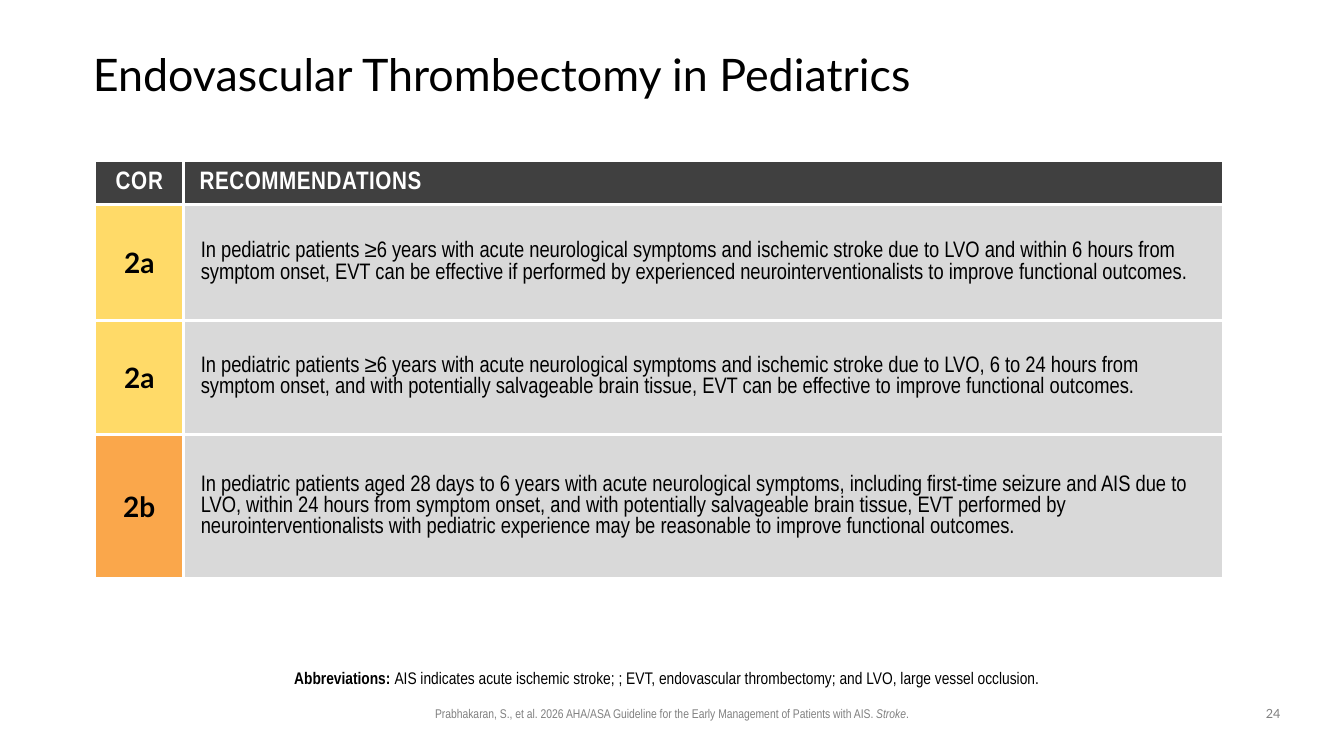
from lxml import etree
from pptx import Presentation
from pptx.dml.color import RGBColor
from pptx.enum.text import MSO_ANCHOR, MSO_AUTO_SIZE, PP_ALIGN
from pptx.oxml.ns import qn
from pptx.util import Cm, Pt

LEFT, CENTER = PP_ALIGN.LEFT, PP_ALIGN.CENTER
TOP, MIDDLE, BOTTOM = MSO_ANCHOR.TOP, MSO_ANCHOR.MIDDLE, MSO_ANCHOR.BOTTOM
NO_AUTOFIT = MSO_AUTO_SIZE.NONE
NARROW, LATO = "Arial Narrow", "Lato"
BLACK, WHITE, GRAY = "000000", "FFFFFF", "808080"
HEADER_FILL, BODY_FILL = "404040", "D9D9D9"
COR_FILLS = {"2a": "FFDA68", "2b": "FAA74B"}
RECOMMENDATIONS = [
    ("2a", 2.92, "In pediatric patients ≥6 years with acute neurological symptoms and ischemic stroke due to LVO and within 6 hours from symptom onset, EVT can be effective if performed by experienced neurointerventionalists to improve functional outcomes."),
    ("2a", 2.87, "In pediatric patients ≥6 years with acute neurological symptoms and ischemic stroke due to LVO, 6 to 24 hours from symptom onset, and with potentially salvageable brain tissue, EVT can be effective to improve functional outcomes."),
    ("2b", 3.63, "In pediatric patients aged 28 days to 6 years with acute neurological symptoms, including first-time seizure and AIS due to LVO, within 24 hours from symptom onset, and with potentially salvageable brain tissue, EVT performed by neurointerventionalists with pediatric experience may be reasonable to improve functional outcomes."),
]


def color(value):
    return RGBColor.from_string(value)


def add_text(p, text, size=16, font=NARROW, fill=BLACK, bold=False,
             italic=False, align=LEFT, spacing=None, tracking=0, indent=0):
    p.alignment = align
    if spacing:
        p.line_spacing = spacing
    if indent:
        pPr = p._p.get_or_add_pPr()
        pPr.set("marL", str(Cm(indent)))
        pPr.set("indent", "0")
    r = p.add_run()
    r.text = text
    r.font.size = Pt(size)
    r.font.name = font
    r.font.bold = bold
    r.font.italic = italic
    r.font.color.rgb = color(fill)
    if tracking:
        r._r.get_or_add_rPr().set("spc", str(tracking))


def set_margins(item, left, top, right, bottom):
    item.margin_left, item.margin_top = Cm(left), Cm(top)
    item.margin_right, item.margin_bottom = Cm(right), Cm(bottom)


def add_box(s, box, anchor=TOP, left_margin=0.25):
    tf = s.shapes.add_textbox(*map(Cm, box)).text_frame
    tf.word_wrap = True
    tf.vertical_anchor = anchor
    set_margins(tf, left_margin, 0.13, 0.25, 0.13)
    return tf.paragraphs[0]


def add_title(s, box, text):
    sp = s.shapes.title
    sp.left, sp.top, sp.width, sp.height = map(Cm, box)
    tf = sp.text_frame
    tf.auto_size = NO_AUTOFIT
    tf.word_wrap = True
    tf.vertical_anchor = MIDDLE
    set_margins(tf, 0, 0, 0, 0)
    add_text(tf.paragraphs[0], text, size=32, font=LATO, spacing=0.9)


def fill_cell(cell, text, fill, margin=0.13, **text_format):
    tcPr = cell._tc.get_or_add_tcPr()
    for side in ("lnL", "lnR", "lnT", "lnB"):
        ln = etree.SubElement(tcPr, qn(f"a:{side}"), w=str(Pt(2.25)))
        solid = etree.SubElement(ln, qn("a:solidFill"))
        etree.SubElement(solid, qn("a:srgbClr"), val=WHITE)
    cell.fill.solid()
    cell.fill.fore_color.rgb = color(fill)
    cell.vertical_anchor = MIDDLE
    set_margins(cell, margin, 0.13, margin, 0.13)
    add_text(cell.text_frame.paragraphs[0], text, **text_format)


def add_recommendations(s, box, cor_width=2.24, header_height=1.12):
    frame = s.shapes.add_table(len(RECOMMENDATIONS) + 1, 2, *map(Cm, box))
    table = frame.table
    table.columns[0].width = Cm(cor_width)
    table.columns[1].width = Cm(box[2] - cor_width)
    table.rows[0].height = Cm(header_height)
    header = dict(margin=0.25, size=18, fill=HEADER_FILL, bold=True)
    del header["fill"]
    for col, (text, extra) in enumerate([
        ("COR", dict(align=CENTER, tracking=50)),
        ("RECOMMENDATIONS", dict(indent=0.15, tracking=40)),
    ]):
        fill_header(table.cell(0, col), text, **header, **extra)
    for row, (cor, height, text) in enumerate(RECOMMENDATIONS, 1):
        table.rows[row].height = Cm(height)
        fill_cell(table.cell(row, 0), cor, COR_FILLS[cor],
                  size=20, font=LATO, bold=True, align=CENTER)
        fill_cell(table.cell(row, 1), text, BODY_FILL, indent=0.3)


def fill_header(cell, text, **text_format):
    fill_cell(cell, text, HEADER_FILL, **text_format)
    cell.text_frame.paragraphs[0].runs[0].font.color.rgb = color(WHITE)


def add_abbreviations(s, box):
    p = add_box(s, box, BOTTOM, left_margin=0)
    style = dict(size=12, align=CENTER, spacing=0.9)
    add_text(p, "Abbreviations: ", bold=True, **style)
    add_text(p, "AIS indicates acute ischemic stroke; ; EVT, endovascular thrombectomy; and LVO, large vessel occlusion.", **style)


def add_footer(s, citation_box, number_box):
    style = dict(size=9, fill=GRAY, align=CENTER)
    p = add_box(s, citation_box)
    add_text(p, "Prabhakaran, S., et al. 2026 AHA/ASA Guideline for the Early Management of Patients with AIS. ", **style)
    add_text(p, "Stroke", italic=True, **style)
    add_text(p, ".", **style)
    add_text(add_box(s, number_box), "24", font=LATO, **style)


def main():
    prs = Presentation()
    prs.slide_width, prs.slide_height = Cm(33.87), Cm(19.05)
    s = prs.slides.add_slide(prs.slide_layouts[5])
    add_title(s, (2.34, 1.02, 29.21, 1.83), "Endovascular Thrombectomy in Pediatrics")
    add_recommendations(s, (2.39, 4.04, 28.43, 10.54))
    add_abbreviations(s, (4.78, 16.31, 24.31, 1.17))
    add_footer(s, (5.99, 17.65, 21.89, 0.64), (31.55, 17.65, 1.07, 0.66))
    prs.save("out.pptx")


if __name__ == "__main__":
    main()
